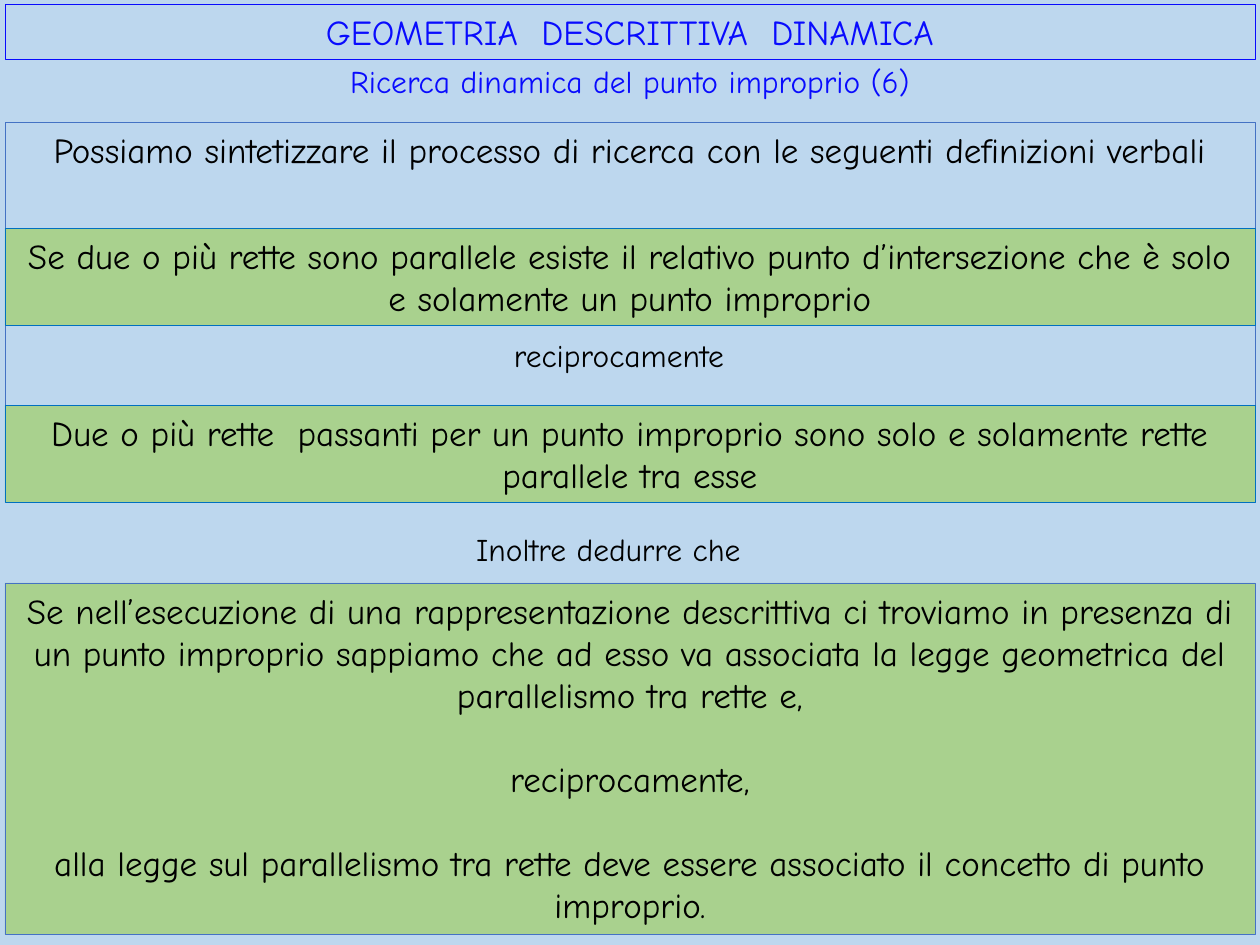
from pptx import Presentation
from pptx.dml.color import RGBColor
from pptx.enum.shapes import MSO_SHAPE
from pptx.enum.text import MSO_ANCHOR, MSO_AUTO_SIZE, PP_ALIGN
from pptx.util import Cm, Pt

FONT = "Comic Neue"
BLUE, BLACK, GREEN = "090BFE", "000000", "A9D18E"
EDGE, RULE_EDGE = "4472C4", "0070C0"
LEFT, WIDTH = 0.1, 25.2
RULE_HEIGHT = 1.96
PARAGRAPH_GAP = 24


def rgb(hex_colour):
    return RGBColor.from_string(hex_colour)


def write(frame, text, size, colour=BLACK, align=PP_ALIGN.CENTER):
    """Fill a text frame, one paragraph per line of text."""
    frame.text = text
    frame.word_wrap = True
    frame.auto_size = MSO_AUTO_SIZE.NONE
    frame.vertical_anchor = MSO_ANCHOR.TOP
    for index, paragraph in enumerate(frame.paragraphs):
        paragraph.alignment = align
        paragraph.space_before = Pt(PARAGRAPH_GAP if index else 0)
        for run in paragraph.runs:
            run.font.name = FONT
            run.font.size = Pt(size)
            run.font.color.rgb = rgb(colour)


def outline(shape, colour):
    shape.line.color.rgb = rgb(colour)
    shape.line.width = Pt(0.25)


def add_heading(slide, text):
    heading = slide.shapes.title
    heading.left, heading.top = Cm(LEFT), Cm(0.08)
    heading.width, heading.height = Cm(WIDTH), Cm(1.12)
    outline(heading, BLUE)
    write(heading.text_frame, text, 20, BLUE)


def add_panel(slide, top, height, text, edge, fill=None):
    """Add a full-width outlined box, see-through unless a fill is given."""
    panel = slide.shapes.add_shape(
        MSO_SHAPE.RECTANGLE, Cm(LEFT), Cm(top), Cm(WIDTH), Cm(height))
    panel.shadow.inherit = False
    if fill:
        panel.fill.solid()
        panel.fill.fore_color.rgb = rgb(fill)
    else:
        panel.fill.background()
    outline(panel, edge)
    write(panel.text_frame, text, 20)


def add_caption(slide, left, top, width, text, colour=BLACK, align=PP_ALIGN.LEFT):
    caption = slide.shapes.add_textbox(Cm(left), Cm(top), Cm(width), Cm(1.02))
    write(caption.text_frame, text, 18, colour, align)


def main():
    prs = Presentation()
    prs.slide_width, prs.slide_height = Cm(25.4), Cm(19.05)
    slide = prs.slides.add_slide(prs.slide_layouts.get_by_name("Title Only"))
    slide.background.fill.solid()
    slide.background.fill.fore_color.rgb = rgb("BDD7EE")

    add_heading(slide, "GEOMETRIA  DESCRITTIVA  DINAMICA")
    add_caption(slide, LEFT, 1.12, WIDTH, "Ricerca dinamica del punto improprio (6)",
                BLUE, PP_ALIGN.CENTER)
    add_panel(slide, 2.46, 6.25,
              "Possiamo sintetizzare il processo di ricerca con le seguenti "
              "definizioni verbali", EDGE)
    add_panel(slide, 4.6, RULE_HEIGHT,
              "Se due o più rette sono parallele esiste il relativo punto "
              "d’intersezione che è solo e solamente un punto improprio",
              RULE_EDGE, GREEN)
    add_caption(slide, 10.11, 6.65, 5.16, "reciprocamente")
    add_panel(slide, 8.17, RULE_HEIGHT,
              "Due o più rette  passanti per un punto improprio sono solo e "
              "solamente rette parallele tra esse", RULE_EDGE, GREEN)
    add_caption(slide, 9.35, 10.57, 6.71, "Inoltre dedurre che")
    add_panel(slide, 11.75, 7.09,
              "Se nell’esecuzione di una rappresentazione descrittiva ci troviamo "
              "in presenza di un punto improprio sappiamo che ad esso va associata "
              "la legge geometrica del parallelismo tra rette e,\n"
              "reciprocamente,\n"
              "alla legge sul parallelismo tra rette deve essere associato il "
              "concetto di punto improprio.", EDGE, GREEN)

    prs.save("out.pptx")


if __name__ == "__main__":
    main()
